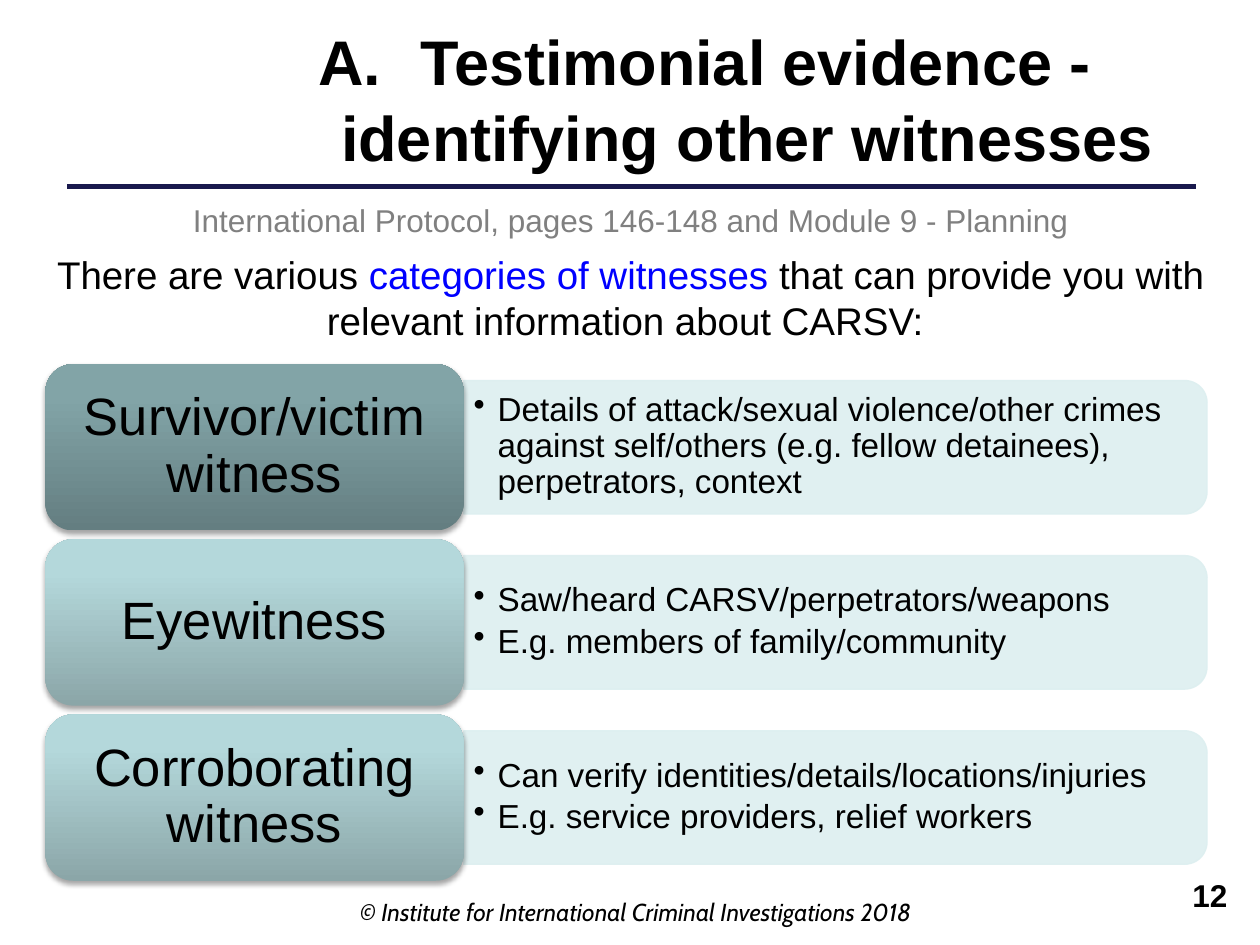
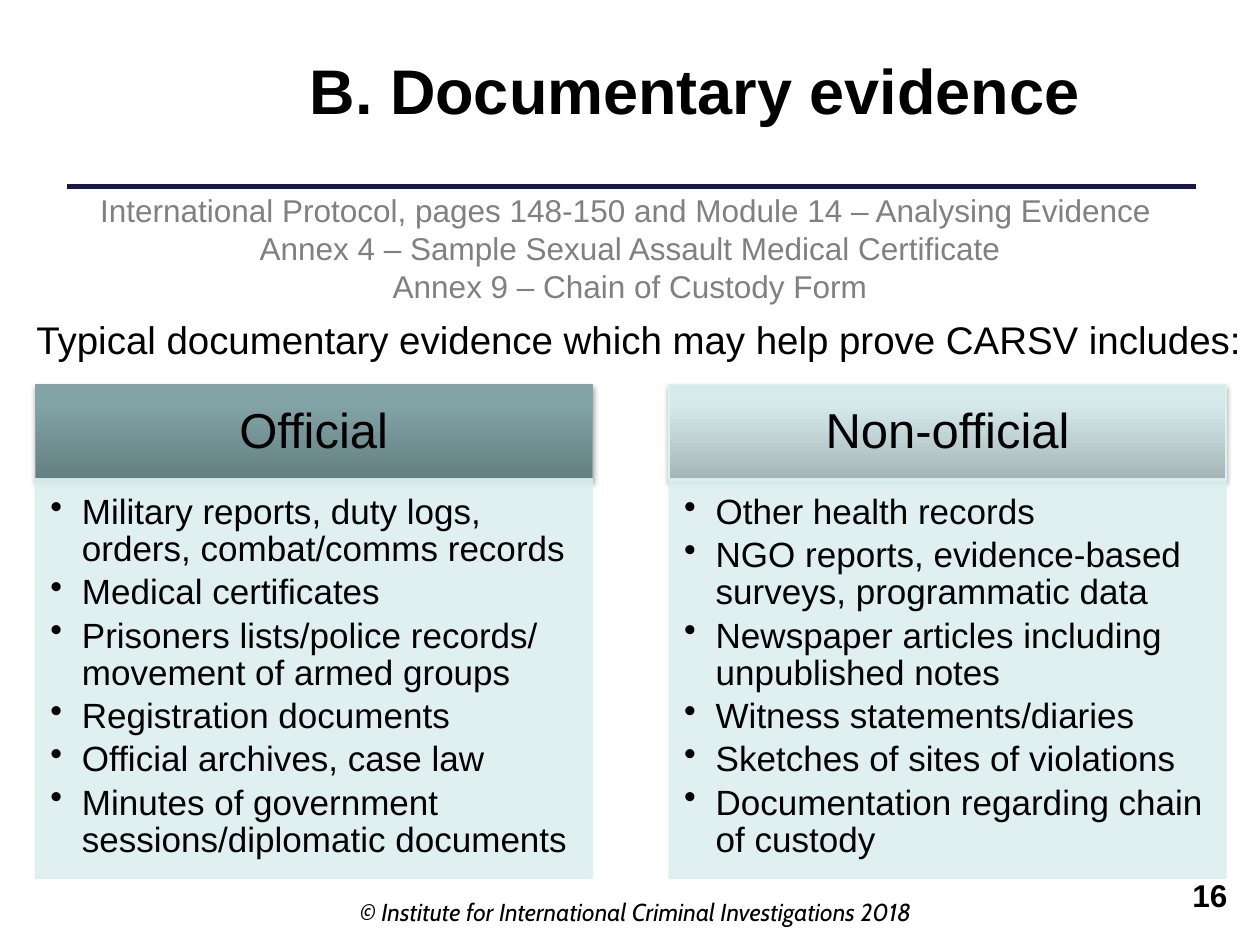
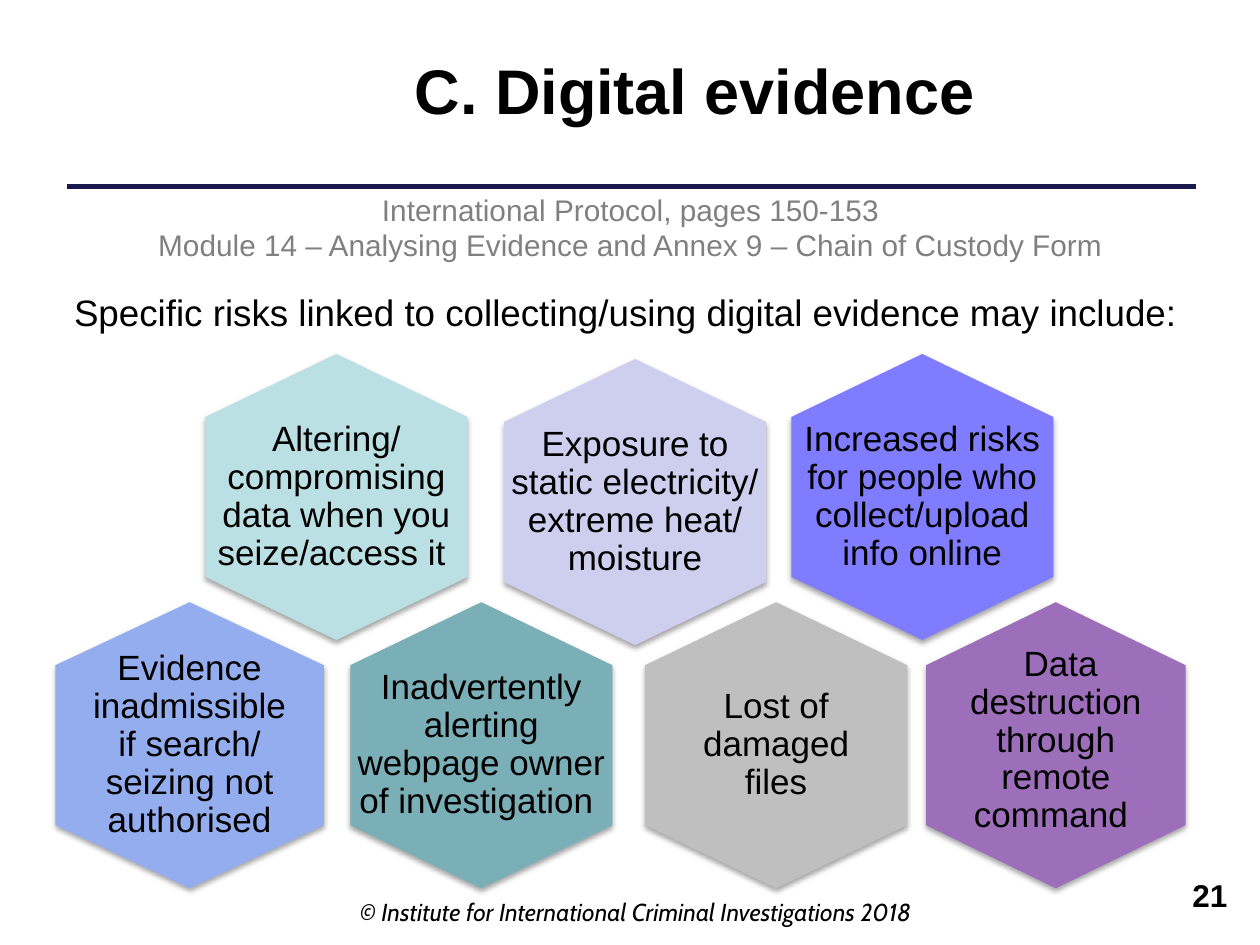
"""Build three slides on testimonial, documentary and digital evidence."""
from dataclasses import dataclass

from lxml.etree import SubElement
from pptx import Presentation
from pptx.dml.color import RGBColor
from pptx.enum.shapes import MSO_CONNECTOR, MSO_SHAPE
from pptx.enum.text import MSO_ANCHOR, PP_ALIGN
from pptx.oxml.ns import qn
from pptx.util import Inches, Pt


@dataclass(frozen=True)
class Theme:
    """Hold the colours, fonts and type sizes."""
    font: str = "Arial"
    foot_font: str = "Cabin"
    ink: str = "000000"
    grey: str = "808080"
    blue: str = "0000FF"
    rule: str = "19194D"
    panel: str = "DDEFF0"
    dark: tuple = ("647E81", "82A4A7")
    mid: tuple = ("8BA6A8", "B4D8DB")
    pale: tuple = ("A5B5B6", "D6EAEC")
    title: int = 36
    label: int = 30
    head: int = 28
    lead: int = 22
    body: int = 20
    point: int = 19
    note: int = 18
    foot: int = 14


T = Theme()
PAD = (0.1, 0.05, 0.1, 0.05)
LEFT, MID, RIGHT = PP_ALIGN.LEFT, PP_ALIGN.CENTER, PP_ALIGN.RIGHT
TOP, CENTRE = MSO_ANCHOR.TOP, MSO_ANCHOR.MIDDLE


def rgb(code):
    """Turn a hex code into a colour."""
    return RGBColor.from_string(code)


def write(shape, paras, size, align=MID, anchor=TOP, pad=PAD, color=T.ink,
          font=T.font, bold=False, slant=False, space=1.0, dot=0, after=0):
    """Fill a shape with paragraphs, each a string or a list of (text, colour)."""
    frame = shape.text_frame
    frame.word_wrap = True
    frame.vertical_anchor = anchor
    (frame.margin_left, frame.margin_top,
     frame.margin_right, frame.margin_bottom) = map(Inches, pad)
    for i, para in enumerate(paras):
        p = frame.paragraphs[0] if i == 0 else frame.add_paragraph()
        if dot:
            indent(p, dot, "buChar", char="•")
        p.alignment = align
        p.line_spacing = space
        p.space_after = Pt(after)
        for text, tint in [(para, color)] if isinstance(para, str) else para:
            run = p.add_run()
            run.text = text
            run.font.name = font
            run.font.size = Pt(size)
            run.font.bold = bold
            run.font.italic = slant
            run.font.color.rgb = rgb(tint)
    return shape


def indent(para, depth, tag, **attrs):
    """Give a paragraph a hanging bullet or number."""
    props = para._p.get_or_add_pPr()
    props.set("marL", str(Inches(depth)))
    props.set("indent", str(-Inches(depth)))
    SubElement(props, qn("a:" + tag), **attrs)


def text(slide, box, paras, size, **style):
    """Add a text box."""
    return write(slide.shapes.add_textbox(*map(Inches, box)), paras, size, **style)


def shade(shape):
    """Add a soft shadow below a shape."""
    shape.shadow.inherit = False
    effects = shape._element.spPr.find(qn("a:effectLst"))
    cast = SubElement(effects, qn("a:outerShdw"), blurRad=str(Pt(3.1)),
                      dist=str(Pt(1.8)), dir="5400000", rotWithShape="0")
    tint = SubElement(cast, qn("a:srgbClr"), val="000000")
    SubElement(tint, qn("a:alpha"), val="35000")


def panel(slide, kind, box, turn=0):
    """Add a slightly clear panel."""
    shape = slide.shapes.add_shape(kind, *map(Inches, box))
    shape.rotation = turn
    shape.shadow.inherit = False
    shape.fill.solid()
    shape.fill.fore_color.rgb = rgb(T.panel)
    shape.line.color.rgb = rgb(T.panel)
    shape.line.width = Pt(0.75)
    for tint in shape._element.spPr.iter(qn("a:srgbClr")):
        SubElement(tint, qn("a:alpha"), val="90000")
    return shape


def plate(slide, kind, box, tints, edge=None):
    """Add a shaded plate that is darker at its foot."""
    shape = slide.shapes.add_shape(kind, *map(Inches, box))
    shade(shape)
    shape.fill.gradient()
    shape.fill.gradient_angle = 90
    for stop, place, tint in zip(shape.fill.gradient_stops, (0, 0.8), tints):
        stop.position = place
        stop.color.rgb = rgb(tint)
    if edge:
        shape.line.color.rgb = rgb(edge)
        shape.line.width = Pt(0.75)
    else:
        shape.line.fill.background()
    return shape


def hexa(slide, left, top, width, color, words, pad):
    """Add an upright hexagon with text."""
    high, cut = 2.27, 0.5
    right, peak = left + width, left + width / 2
    low = top + high - cut
    spots = [(right, top + cut), (right, low), (peak, top + high),
             (left, low), (left, top + cut)]
    form = slide.shapes.build_freeform(Inches(peak), Inches(top))
    form.add_line_segments([(Inches(x), Inches(y)) for x, y in spots])
    shape = form.convert_to_shape()
    shade(shape)
    shape.fill.solid()
    shape.fill.fore_color.rgb = rgb(color)
    shape.line.fill.background()
    write(shape, [words], T.body, anchor=CENTRE, pad=pad, space=0.9)


def base(deck, title, number, box=(1.38, 0.36, 8.27, 0.71)):
    """Start a slide with its rule, title, footer and number."""
    slide = deck.slides.add_slide(deck.slide_layouts[6])
    ends = map(Inches, (9.49, 1.48, 0.53, 1.48))
    rule = slide.shapes.add_connector(MSO_CONNECTOR.STRAIGHT, *ends)
    rule.line.color.rgb = rgb(T.rule)
    rule.line.width = Pt(2.5)
    SubElement(rule._element.spPr, qn("a:effectLst"))
    head = text(slide, box, [title], T.title, bold=True)
    text(slide, (2.72, 7.07, 4.65, 0.33),
         ["© Institute for International Criminal Investigations 2018"],
         T.foot, font=T.foot_font, slant=True)
    text(slide, (7.28, 6.9, 2.56, 0.52), [number], T.note, align=RIGHT, bold=True)
    return slide, head


def people(deck):
    """Build the slide on kinds of witness."""
    slide, head = base(deck, "Testimonial evidence - identifying other witnesses ",
                       "12", (1.46, 0.13, 8.27, 1.31))
    indent(head.text_frame.paragraphs[0], 0.81, "buAutoNum", type="alphaUcPeriod")
    text(slide, (0.28, 1.55, 9.45, 0.4),
         ["International Protocol, pages 146-148 and Module 9 - Planning"],
         T.note, color=T.grey)
    text(slide, (0.2, 1.94, 9.61, 0.84),
         [[("There are various ", T.ink), ("categories of witnesses ", T.blue),
           ("that can provide you with relevant information about CARSV: ", T.ink)]],
         T.lead)
    rows = [
        ("Survivor/victim witness", T.dark,
         ["Details of attack/sexual violence/other crimes against self/others "
          "(e.g. fellow detainees), perpetrators, context"]),
        ("Eyewitness", T.mid,
         ["Saw/heard CARSV/perpetrators/weapons",
          "E.g. members of family/community"]),
        ("Corroborating witness", T.mid,
         ["Can verify identities/details/locations/injuries",
          "E.g. service providers, relief workers"]),
    ]
    for i, (name, tints, points) in enumerate(rows):
        top = 2.89 + 1.39 * i
        panel(slide, MSO_SHAPE.ROUND_2_SAME_RECTANGLE,
              (6.1, top - 2.29, 1.06, 5.9), 90)
        text(slide, (3.68, top + 0.18, 5.85, 0.95), points, T.point, align=LEFT,
             anchor=CENTRE, pad=(0.08, 0.04, 0.08, 0.04), space=0.9, dot=0.19, after=3)
        label = plate(slide, MSO_SHAPE.ROUNDED_RECTANGLE, (0.36, top, 3.32, 1.32), tints)
        write(label, [name], T.label, anchor=CENTRE, pad=(0.12, 0.06, 0.12, 0.06),
              space=0.9)


def papers(deck):
    """Build the slide on documents."""
    slide, _ = base(deck, "B. Documentary evidence", "16")
    text(slide, (0.19, 2.48, 9.8, 0.42),
         ["Typical documentary evidence which may help prove CARSV includes:"],
         T.lead, align=LEFT, anchor=CENTRE)
    text(slide, (0, 1.47, 10, 1.01),
         ["International Protocol, pages 148-150 and Module 14 – Analysing Evidence ",
          "Annex 4 – Sample Sexual Assault Medical Certificate",
          "Annex 9 – Chain of Custody Form"], T.note, color=T.grey)
    lists = [
        ("Official", T.dark, "8AA6A8",
         ["Military reports, duty logs, orders, combat/comms records",
          "Medical certificates",
          "Prisoners lists/police records/ movement of armed groups",
          "Registration documents",
          "Official archives, case law",
          "Minutes of government sessions/diplomatic documents"]),
        ("Non-official", T.pale, "DFF0F1",
         ["Other health records",
          "NGO reports, evidence-based surveys, programmatic data",
          "Newspaper articles including unpublished notes",
          "Witness statements/diaries",
          "Sketches of sites of violations",
          "Documentation regarding chain of custody"]),
    ]
    for i, (name, tints, edge, points) in enumerate(lists):
        left = 0.28 + 5.03 * i
        head = plate(slide, MSO_SHAPE.RECTANGLE, (left, 3.05, 4.42, 0.76), tints, edge)
        write(head, [name], T.head, anchor=CENTRE, pad=(0.22, 0.12, 0.22, 0.12),
              space=0.9)
        body = panel(slide, MSO_SHAPE.RECTANGLE, (left, 3.8, 4.42, 3.17))
        write(body, points, T.body, align=LEFT, pad=(0.12, 0.12, 0.16, 0.17),
              space=0.9, dot=0.25, after=3)


def risks(deck):
    """Build the slide on digital risks."""
    slide, _ = base(deck, "C. Digital evidence", "21")
    text(slide, (0.28, 1.47, 9.45, 0.96),
         ["International Protocol, pages 150-153",
          "Module 14 – Analysing Evidence and Annex 9 – Chain of Custody Form"],
         T.note - 1, color=T.grey)
    text(slide, (0.28, 2.25, 9.37, 0.47),
         ["Specific risks linked to collecting/using digital evidence may include:"],
         T.lead - 1)
    wide, slim = (0, 0.26, 0, 0.26), (0.23, 0.26, 0.23, 0.26)
    cells = [
        (7.35, 4.78, 2.06, "9D6FBA", " Data destruction through remote command ",
         (0.23, 0.26, 0.23, 0.33)),
        (6.28, 2.81, 2.08, "7F7CFF",
         "Increased risks for people who collect/upload info online", wide),
        (0.44, 4.78, 2.13, "93ADEF",
         "Evidence inadmissible if search/ seizing not authorised", slim),
        (4, 2.85, 2.08, "CECEEF",
         "Exposure to static electricity/ extreme heat/ moisture", wide),
        (1.63, 2.81, 2.08, "BBE0E3",
         "Altering/ compromising data when you seize/access it ", wide),
        (2.78, 4.78, 2.08, "7BAFB7",
         "Inadvertently alerting webpage owner of investigation ", wide),
        (5.12, 4.78, 2.08, "BFBFBF", "Lost of damaged files", slim),
    ]
    for cell in cells:
        hexa(slide, *cell)


def main():
    """Build and save the deck."""
    deck = Presentation()
    deck.slide_width, deck.slide_height = Inches(10), Inches(7.5)
    people(deck)
    papers(deck)
    risks(deck)
    deck.save("out.pptx")


if __name__ == "__main__":
    main()
